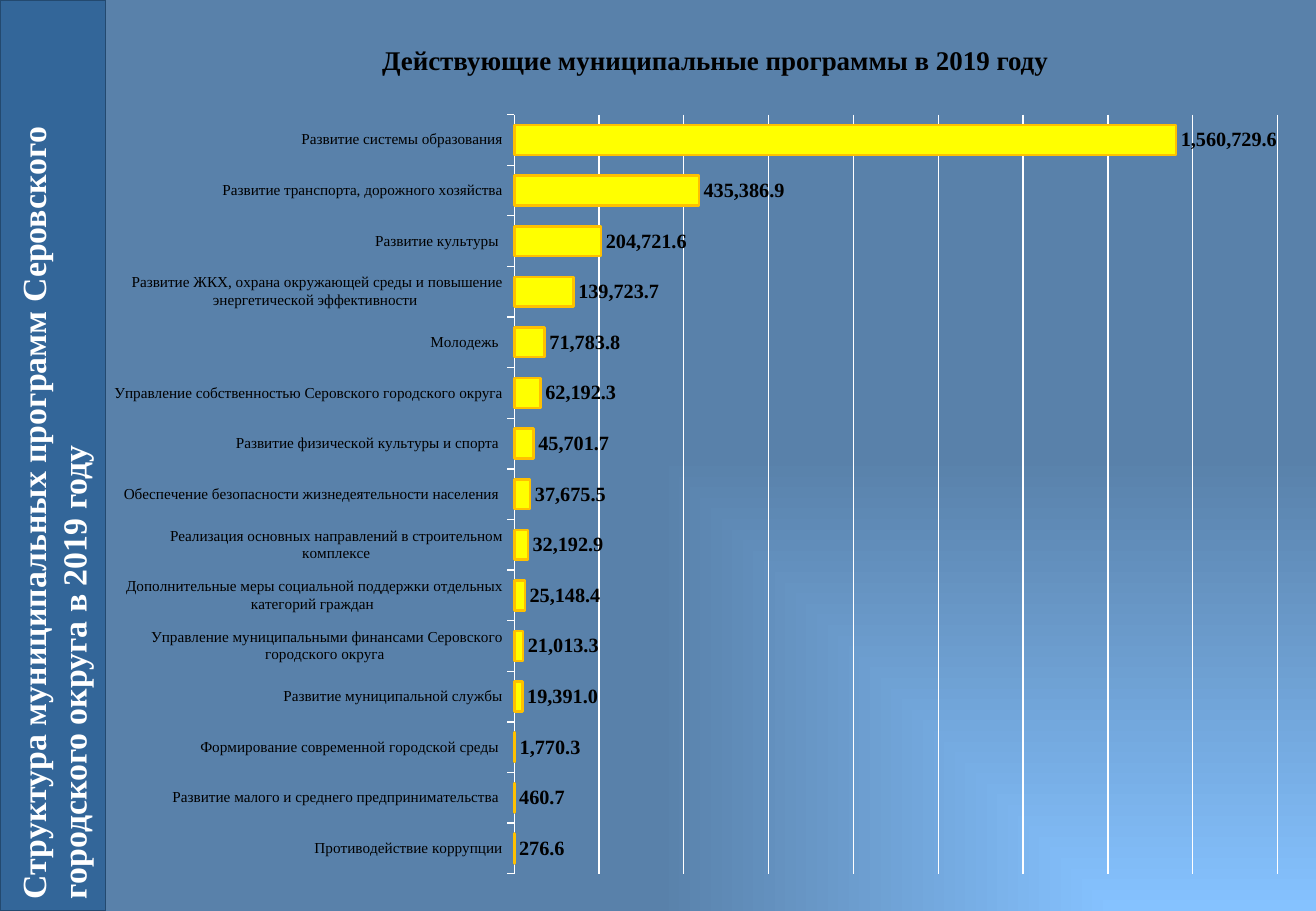
from lxml import etree
from pptx import Presentation
from pptx.chart.data import CategoryChartData
from pptx.dml.color import RGBColor
from pptx.enum import chart as ch, shapes, text
from pptx.oxml.ns import qn
from pptx.util import Inches, Pt

TITLE = "Действующие муниципальные программы в 2019 году"
SIDEBAR = "Структура муниципальных программ Серовского городского округа в 2019 году"
PROGRAMS = [
    (" Противодействие коррупции", 276.6),
    ("Развитие малого и среднего предпринимательства ", 460.7),
    ("Формирование современной городской среды ", 1770.3),
    ("Развитие муниципальной службы", 19391.0),
    ("Управление муниципальными финансами Серовского городского округа ", 21013.3),
    ("Дополнительные меры социальной поддержки отдельных категорий граждан ", 25148.4),
    ("Реализация основных направлений в строительном комплексе", 32192.9),
    ("Обеспечение безопасности жизнедеятельности населения ", 37675.5),
    ("Развитие физической культуры и спорта ", 45701.7),
    ("Управление собственностью Серовского городского округа", 62192.3),
    ("Молодежь ", 71783.8),
    ("Развитие ЖКХ, охрана окружающей среды и повышение энергетической эффективности ", 139723.7),
    ("Развитие культуры ", 204721.6),
    ("Развитие транспорта, дорожного хозяйства", 435386.9),
    ("Развитие системы образования", 1560729.6),
]
COLORS = {
    "glow": "85C2FF", "back": "5981AA", "sidebar": "336699", "edge": "23496F",
    "bar": "FFFF00", "bar_edge": "FFC000", "ink": "000000", "white": "FFFFFF",
}
FONT = "Times New Roman"
NUMBER_FORMAT = "#,##0.0"
WIDTH, HEIGHT, SIDEBAR_WIDTH = 10.83, 7.5, 0.87
PLOT = {"x": 0.339, "y": 0.037, "w": 0.643, "h": 0.947}


def rgb(name):
    return RGBColor.from_string(COLORS[name])


def style_font(font, size, color, bold=False):
    for key, value in {"name": FONT, "size": Pt(size), "bold": bold}.items():
        setattr(font, key, value)
    font.color.rgb = rgb(color)


def style_line(line, color, width):
    line.color.rgb = rgb(color)
    line.width = Pt(width)


def add_background(slide):
    """Gradient that glows from the bottom right corner."""
    fill = slide.background.fill
    fill.gradient()
    for stop, name, position in zip(fill.gradient_stops, ("glow", "back"), (0, 1)):
        stop.color.rgb = rgb(name)
        stop.position = position
    grad = slide.background._cSld.find(".//" + qn("a:gradFill"))
    grad.remove(grad.find(qn("a:lin")))
    path = etree.SubElement(grad, qn("a:path"), path="rect")
    etree.SubElement(path, qn("a:fillToRect"), l="100000", t="100000")


def add_title(slide):
    sp = slide.shapes.title
    sp.left, sp.top, sp.width, sp.height = map(Inches, (1.62, 0.31, 8.53, 0.37))
    tf = sp.text_frame
    tf.text = TITLE
    format_values = {"word_wrap": True, "vertical_anchor": text.MSO_ANCHOR.TOP,
                     "auto_size": text.MSO_AUTO_SIZE.SHAPE_TO_FIT_TEXT}
    for key, value in format_values.items():
        setattr(tf, key, value)
    p = tf.paragraphs[0]
    p.alignment = text.PP_ALIGN.CENTER
    style_font(p.runs[0].font, 16, "ink", True)


def add_sidebar(slide):
    """Bar as long as the slide is high, turned to stand on the left edge."""
    offset = (HEIGHT - SIDEBAR_WIDTH) / 2
    sp = slide.shapes.add_shape(
        shapes.MSO_SHAPE.RECTANGLE, Inches(-offset), Inches(offset),
        Inches(HEIGHT), Inches(SIDEBAR_WIDTH))
    sp.rotation = 270
    sp.shadow.inherit = False
    sp.fill.solid()
    sp.fill.fore_color.rgb = rgb("sidebar")
    style_line(sp.line, "edge", 1)
    tf = sp.text_frame
    tf.text = SIDEBAR
    tf.word_wrap = True
    tf.vertical_anchor = text.MSO_ANCHOR.MIDDLE
    p = tf.paragraphs[0]
    p.alignment = text.PP_ALIGN.LEFT
    style_font(p.runs[0].font, 20, "white", True)


def set_plot_layout(chart):
    plot_area = chart._chartSpace.find(".//" + qn("c:plotArea"))
    layout = plot_area.find(qn("c:layout"))
    if layout is None:
        layout = etree.Element(qn("c:layout"))
        plot_area.insert(0, layout)
    manual = etree.SubElement(layout, qn("c:manualLayout"))
    settings = {"layoutTarget": "inner", "xMode": "edge", "yMode": "edge", **PLOT}
    for key, value in settings.items():
        etree.SubElement(manual, qn("c:" + key), val=str(value))


def add_programs_chart(slide):
    data = CategoryChartData(number_format=NUMBER_FORMAT)
    data.categories = [name for name, _ in PROGRAMS]
    data.add_series("Series 1", [value for _, value in PROGRAMS])
    chart = slide.shapes.add_chart(
        ch.XL_CHART_TYPE.BAR_CLUSTERED, Inches(0.92), Inches(0.7),
        Inches(9.77), Inches(6.6), data).chart
    chart.has_legend = chart.has_title = False
    style_font(chart.font, 10, "white")
    set_plot_layout(chart)

    programs = chart.category_axis
    programs.major_tick_mark = ch.XL_TICK_MARK.OUTSIDE
    style_font(programs.tick_labels.font, 9, "ink")
    style_line(programs.format.line, "white", 0.75)

    amounts = chart.value_axis
    scale = {"minimum_scale": 0, "maximum_scale": 1800000, "major_unit": 200000,
             "has_major_gridlines": True, "visible": False}
    for key, value in scale.items():
        setattr(amounts, key, value)
    style_line(amounts.major_gridlines.format.line, "white", 0.75)

    plot = chart.plots[0]
    plot.gap_width = 70
    plot.vary_by_categories = False
    series = plot.series[0]
    series.format.fill.solid()
    series.format.fill.fore_color.rgb = rgb("bar")
    style_line(series.format.line, "bar_edge", 1.5)
    labels = series.data_labels
    label_format = {"show_value": True, "number_format": NUMBER_FORMAT,
                    "number_format_is_linked": False,
                    "position": ch.XL_LABEL_POSITION.OUTSIDE_END}
    for key, value in label_format.items():
        setattr(labels, key, value)
    style_font(labels.font, 12, "ink", True)


def main():
    prs = Presentation()
    prs.slide_width, prs.slide_height = Inches(WIDTH), Inches(HEIGHT)
    slide = prs.slides.add_slide(prs.slide_layouts.get_by_name("Title Only"))
    add_background(slide)
    add_title(slide)
    add_sidebar(slide)
    add_programs_chart(slide)
    prs.save("out.pptx")


if __name__ == "__main__":
    main()
